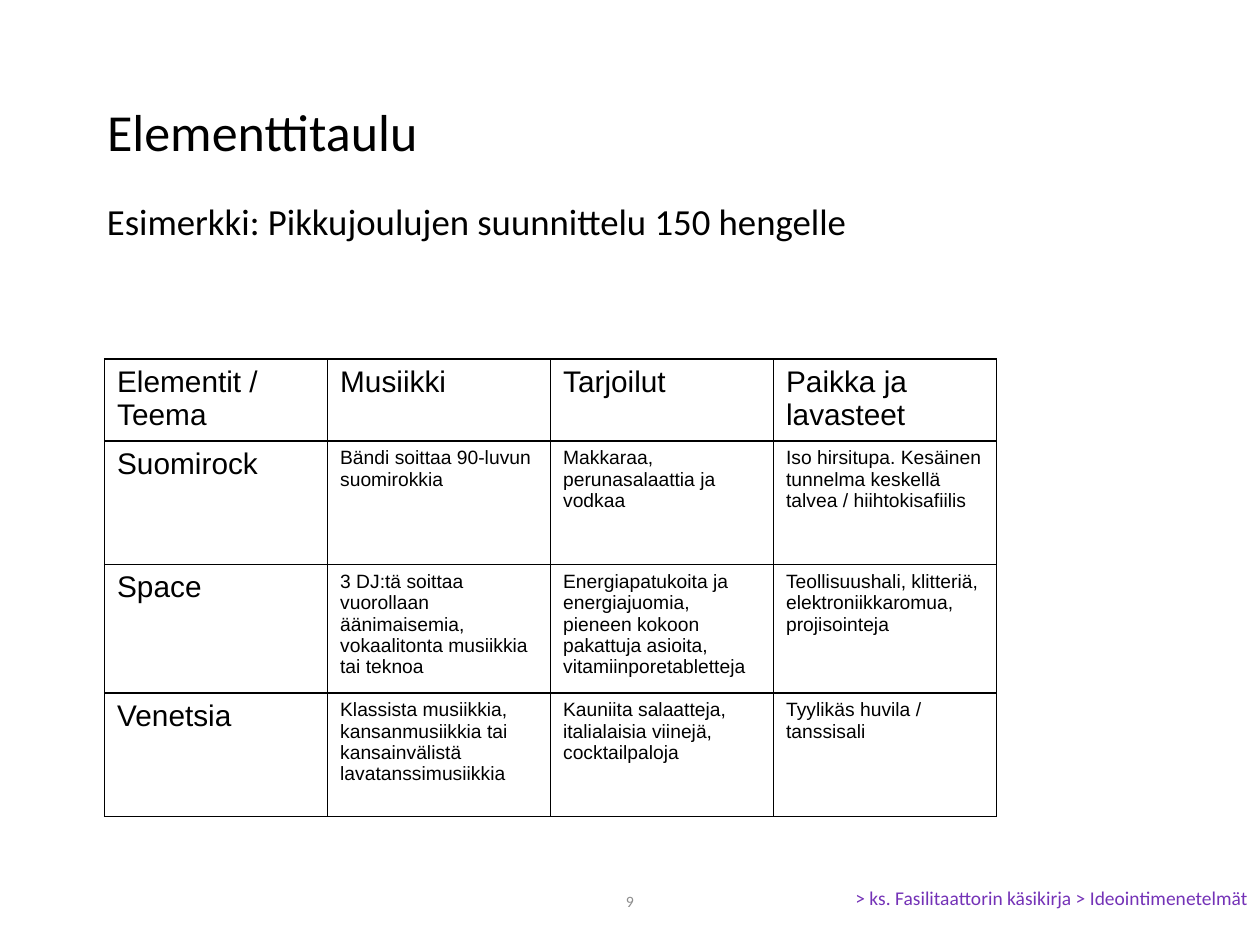
import pptx
import pptx.dml.color
import pptx.enum.text
import pptx.oxml
import pptx.oxml.ns
import pptx.util
from dataclasses import dataclass

WIDTH, HEIGHT = 10, 7.5
INK = "000000"
ALIGN = pptx.enum.text.PP_ALIGN
ANCHOR = pptx.enum.text.MSO_ANCHOR


@dataclass
class Label:
    text: str
    left: float
    top: float
    width: float
    height: float
    size: float
    color: str = INK
    align: ALIGN = ALIGN.LEFT
    anchor: ANCHOR = ANCHOR.MIDDLE
    line: float = 1.0
    before: float = 0


TITLE = Label("Elementtitaulu", 0.075, 0.104, 0.85, 0.077, 29.7, line=0.9)
LABELS = [
    Label("Esimerkki: Pikkujoulujen suunnittelu 150 hengelle",
          0.075, 0.209, 0.85, 0.576, 21, anchor=ANCHOR.TOP, line=0.9, before=7.5),
    Label("9", 0.331, 0.927, 0.338, 0.053, 9, "8C8C8C", ALIGN.CENTER),
    Label("> ks. Fasilitaattorin käsikirja > Ideointimenetelmät",
          0.669, 0.923, 0.439, 0.053, 11.1, "7432B7"),
]

ROWS = [
    ["Elementit / Teema", "Musiikki", "Tarjoilut", "Paikka ja lavasteet"],
    ["Suomirock", "Bändi soittaa 90-luvun suomirokkia",
     "Makkaraa, perunasalaattia ja vodkaa",
     "Iso hirsitupa. Kesäinen tunnelma keskellä talvea / hiihtokisafiilis"],
    ["Space", "3 DJ:tä soittaa vuorollaan äänimaisemia, vokaalitonta musiikkia tai teknoa",
     "Energiapatukoita ja energiajuomia, pieneen kokoon pakattuja asioita, vitamiinporetabletteja",
     "Teollisuushali, klitteriä, elektroniikkaromua, projisointeja"],
    ["Venetsia", "Klassista musiikkia, kansanmusiikkia tai kansainvälistä lavatanssimusiikkia",
     "Kauniita salaatteja, italialaisia viinejä, cocktailpaloja",
     "Tyylikäs huvila / tanssisali"],
]
ROW_HEIGHTS = [0.65, 0.98, 1.02, 0.98]
COLUMN_WIDTH = 1.77


def rgb(color: str) -> pptx.dml.color.RGBColor:
    return pptx.dml.color.RGBColor.from_string(color)


def style_font(p, name: str, size: float, color: str) -> None:
    for r in p.runs:
        r.font.name = name
        r.font.size = pptx.util.Pt(size)
        r.font.color.rgb = rgb(color)


def fill_label(sp, label: Label) -> None:
    sp.left, sp.width = (pptx.util.Inches(v * WIDTH) for v in (label.left, label.width))
    sp.top, sp.height = (pptx.util.Inches(v * HEIGHT) for v in (label.top, label.height))
    tf = sp.text_frame
    tf.text = label.text
    tf.word_wrap = True
    tf.auto_size = pptx.enum.text.MSO_AUTO_SIZE.NONE
    tf.vertical_anchor = label.anchor
    p = tf.paragraphs[0]
    p.alignment = label.align
    p.line_spacing = label.line
    p.space_before = pptx.util.Pt(label.before)
    style_font(p, "Calibri", label.size, label.color)


def add_borders(cell, color: str, width: float) -> None:
    props = cell._tc.get_or_add_tcPr()
    for index, side in enumerate(("lnL", "lnR", "lnT", "lnB")):
        props.insert(index, pptx.oxml.parse_xml(
            f'<a:{side} {pptx.oxml.ns.nsdecls("a")} w="{pptx.util.Pt(width)}">'
            f'<a:solidFill><a:srgbClr val="{color}"/></a:solidFill></a:{side}>'))


def add_element_table(s) -> None:
    count = len(ROWS[0])
    table = s.shapes.add_table(
        len(ROWS), count, pptx.util.Inches(0.83), pptx.util.Inches(2.85),
        pptx.util.Inches(COLUMN_WIDTH * count), pptx.util.Inches(sum(ROW_HEIGHTS))).table
    table.first_row = table.horz_banding = False
    for column in table.columns:
        column.width = pptx.util.Inches(COLUMN_WIDTH)
    for i, texts in enumerate(ROWS):
        table.rows[i].height = pptx.util.Inches(ROW_HEIGHTS[i])
        for j, text in enumerate(texts):
            cell = table.cell(i, j)
            cell.text = text
            cell.fill.background()
            add_borders(cell, INK, 1)
            is_heading = i == 0 or j == 0
            style_font(cell.text_frame.paragraphs[0], "Arial", 17 if is_heading else 11, INK)


def main() -> None:
    prs = pptx.Presentation()
    prs.slide_width = pptx.util.Inches(WIDTH)
    prs.slide_height = pptx.util.Inches(HEIGHT)
    s = prs.slides.add_slide(prs.slide_layouts.get_by_name("Title Only"))
    fill_label(s.shapes.title, TITLE)
    for label in LABELS:
        fill_label(s.shapes.add_textbox(0, 0, 0, 0), label)
    add_element_table(s)
    prs.save("out.pptx")


if __name__ == "__main__":
    main()
